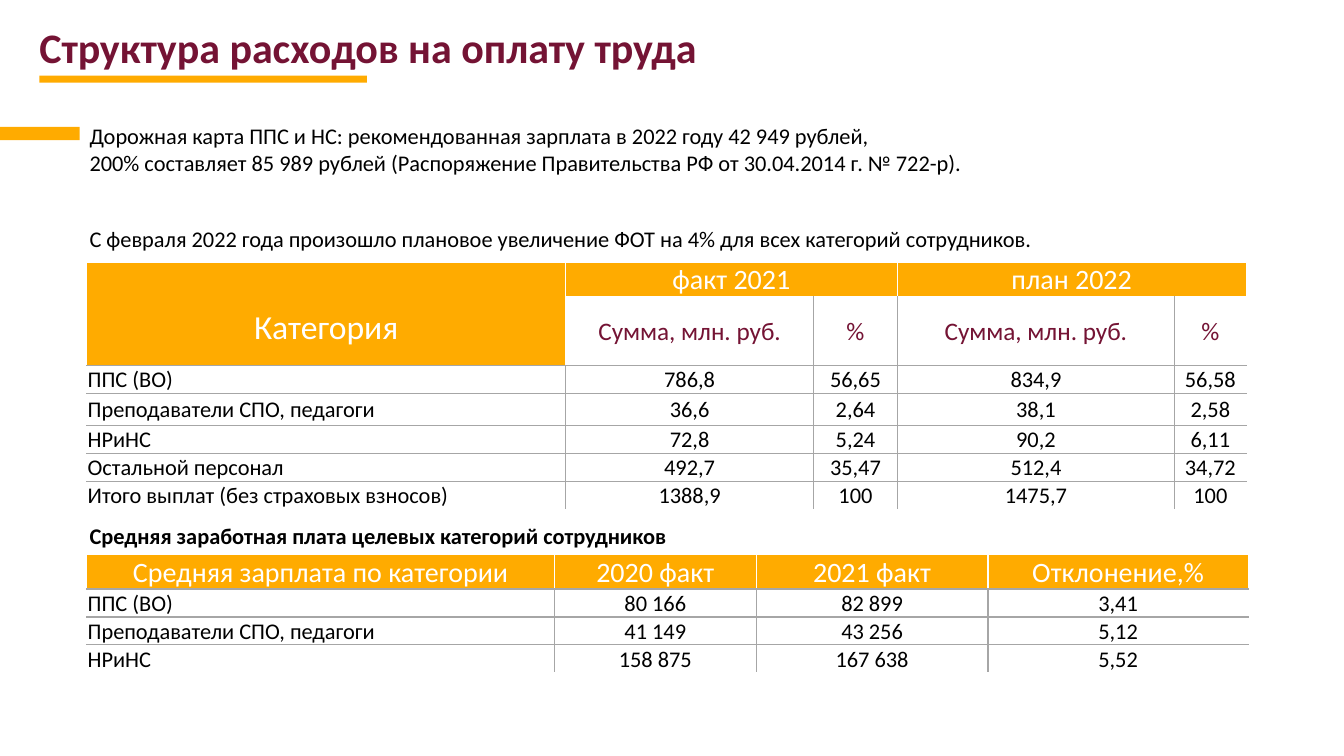
from lxml import etree
from pptx import Presentation
from pptx import util as u
from pptx.dml import color
from pptx.enum import shapes, text
from pptx.oxml import ns

ORANGE, MAROON, GRAY = "FFAB00", "741334", "A6A6A6"
WHITE, BLACK = "FFFFFF", "000000"


def rgb(value):
    return color.RGBColor.from_string(value)


class SlideBuilder:
    font = "Calibri"

    def __init__(self, slide):
        self.slide = slide

    def place(self, shape, left, top, width, height):
        shape.left, shape.top = u.Inches(left), u.Inches(top)
        shape.width, shape.height = u.Inches(width), u.Inches(height)

    def format(self, paragraph, size, fill=BLACK, bold=False, align=text.PP_ALIGN.LEFT):
        paragraph.alignment = align
        for run in paragraph.runs:
            run.font.name = self.font
            run.font.size = u.Pt(size)
            run.font.bold = bold
            run.font.color.rgb = rgb(fill)

    def title(self, content, *box):
        shape = self.slide.shapes.title
        self.place(shape, *box)
        frame = shape.text_frame
        frame.text = content
        frame.auto_size = text.MSO_AUTO_SIZE.NONE
        frame.vertical_anchor = text.MSO_ANCHOR.MIDDLE
        frame.paragraphs[0].line_spacing = 0.9
        self.format(frame.paragraphs[0], 30, MAROON, True)

    def note(self, content, *box, bold=False):
        shape = self.slide.shapes.add_textbox(*map(u.Inches, box))
        frame = shape.text_frame
        frame.word_wrap = True
        frame.text = content
        for paragraph in frame.paragraphs:
            self.format(paragraph, 16, bold=bold)

    def bar(self, *box):
        shape = self.slide.shapes.add_shape(
            shapes.MSO_SHAPE.RECTANGLE, *map(u.Inches, box))
        shape.shadow.inherit = False
        shape.fill.solid()
        shape.fill.fore_color.rgb = rgb(ORANGE)
        shape.line.fill.background()

    def border(self, cell, edge, value):
        properties = cell._tc.get_or_add_tcPr()
        line = etree.SubElement(properties, ns.qn("a:ln" + edge), w=str(u.Pt(1)))
        fill = etree.SubElement(line, ns.qn("a:solidFill"))
        etree.SubElement(fill, ns.qn("a:srgbClr"), val=value)

    def cell(self, cell, content, anchor, size, fill, align, background=None):
        cell.margin_left = cell.margin_right = cell.margin_top = u.Inches(0.01)
        cell.margin_bottom = 0
        cell.vertical_anchor = anchor
        cell.text = content
        self.format(cell.text_frame.paragraphs[0], size, fill, align=align)
        if background:
            cell.fill.solid()
            cell.fill.fore_color.rgb = rgb(background)
        else:
            cell.fill.background()

    def table(self, rows, left, top, widths, heights, anchor, header_rows=1, merges=()):
        table = self.slide.shapes.add_table(
            len(rows), len(widths), u.Inches(left), u.Inches(top),
            u.Inches(sum(widths)), u.Inches(sum(heights))).table
        table.horz_banding = table.first_row = False
        for column, width in zip(table.columns, widths):
            column.width = u.Inches(width)
        for row, height in zip(table.rows, heights):
            row.height = u.Inches(height)
        for start, end in merges:
            table.cell(*start).merge(table.cell(*end))

        def vertical(row, edge):
            beside_header = row == 0 or (row < header_rows and edge == 1)
            return WHITE if beside_header or edge in (0, len(widths)) else GRAY

        def horizontal(edge):
            return WHITE if edge < header_rows or edge == len(rows) else GRAY

        for row, values in enumerate(rows):
            for column, value in enumerate(values):
                cell = table.cell(row, column)
                if cell.is_spanned:
                    continue
                self.border(cell, "L", vertical(row, column))
                self.border(cell, "R", vertical(row, column + cell.span_width))
                self.border(cell, "T", horizontal(row))
                self.border(cell, "B", horizontal(row + cell.span_height))
                align = text.PP_ALIGN.CENTER
                if row == 0:
                    size = 24 if cell.span_height > 1 else 20
                    cell_anchor = anchor if cell.span_height > 1 else text.MSO_ANCHOR.BOTTOM
                    self.cell(cell, value, cell_anchor, size, WHITE, align, ORANGE)
                elif row < header_rows:
                    self.cell(cell, value, anchor, 18, MAROON, align)
                else:
                    if column == 0:
                        align = text.PP_ALIGN.LEFT
                    self.cell(cell, value, anchor, 16, BLACK, align)
        return table


def main():
    presentation = Presentation()
    presentation.slide_width = u.Inches(13.33)
    presentation.slide_height = u.Inches(7.5)
    builder = SlideBuilder(presentation.slides.add_slide(presentation.slide_layouts[5]))

    builder.bar(0.39, 0.75, 3.25, 0.07)
    builder.title("Структура расходов на оплату труда", 0.29, 0.24, 8.71, 0.51)
    builder.note("С февраля 2022 года произошло плановое увеличение ФОТ на 4% "
                 "для всех категорий сотрудников.", 0.79, 2.18, 12.3, 0.37)
    builder.note("Дорожная карта ППС и НС: рекомендованная зарплата в 2022 году 42 949 рублей,\n"
                 "200% составляет 85 989 рублей (Распоряжение Правительства РФ "
                 "от 30.04.2014 г. № 722-р).", 0.79, 1.16, 12.23, 0.64)
    builder.bar(0, 1.26, 0.79, 0.13)

    payroll = [
        ["Категория", "факт 2021", "", "план 2022", ""],
        ["", "Сумма, млн. руб.", "%", "Сумма, млн. руб.", "%"],
        ["ППС (ВО)", "786,8", "56,65", "834,9", "56,58"],
        ["Преподаватели СПО, педагоги", "36,6", "2,64", "38,1", "2,58"],
        ["НРиНС", "72,8", "5,24", "90,2", "6,11"],
        ["Остальной персонал", "492,7", "35,47", "512,4", "34,72"],
        ["Итого выплат (без страховых взносов)", "1388,9", "100", "1475,7", "100"],
    ]
    payroll_table = builder.table(
        payroll, 0.86, 2.6, [4.75, 2.46, 0.83, 2.75, 0.71],
        [0.34, 0.68, 0.27, 0.32, 0.27, 0.27, 0.27], text.MSO_ANCHOR.MIDDLE, header_rows=2,
        merges=[((0, 0), (1, 0)), ((0, 1), (0, 2)), ((0, 3), (0, 4))])
    payroll_table.cell(0, 0).margin_top = u.Inches(0.28)

    salaries = [
        ["Средняя зарплата по категории", "2020 факт", "2021 факт", "Отклонение,%"],
        ["ППС (ВО)", "80 166", "82 899", "3,41"],
        ["Преподаватели СПО, педагоги", "41 149", "43 256", "5,12"],
        ["НРиНС", "158 875", "167 638", "5,52"],
    ]
    builder.table(salaries, 0.86, 5.5, [4.64, 2, 2.3, 2.58],
                  [0.34] + [0.27] * 3, text.MSO_ANCHOR.BOTTOM)
    builder.note("Средняя заработная плата целевых категорий сотрудников",
                 0.79, 5.13, 6.67, 0.37, bold=True)

    presentation.save("out.pptx")


if __name__ == "__main__":
    main()
